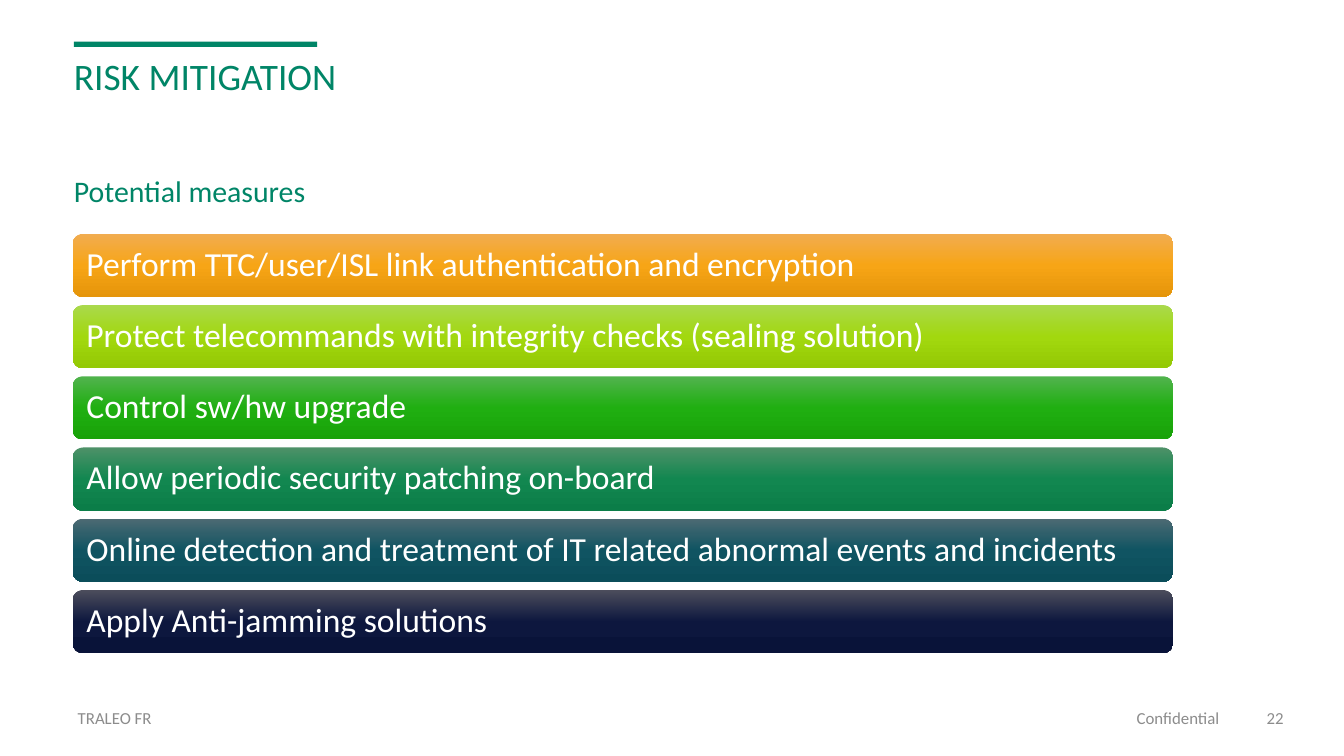
from copy import deepcopy
from dataclasses import dataclass

from lxml import etree
from pptx import Presentation
from pptx.dml.color import RGBColor
from pptx.enum import shapes, text
from pptx.oxml.ns import qn
from pptx.util import Inches, Pt


@dataclass(frozen=True)
class Theme:
    font: str = "Calibri"
    green: str = "008567"
    grey: str = "8C8C8C"
    white: str = "FFFFFF"
    title: int = 20
    heading: int = 16
    measure: int = 18
    footer: int = 9


@dataclass(frozen=True)
class Measure:
    label: str
    colors: tuple[str, str, str]  # gradient from top to bottom


@dataclass(frozen=True)
class Footer:
    label: str
    left: float
    width: float
    align: text.PP_ALIGN


T = Theme()
LEFT, ALIGN_RIGHT = text.PP_ALIGN.LEFT, text.PP_ALIGN.RIGHT
TOP, MIDDLE, BOTTOM = (text.MSO_ANCHOR.TOP, text.MSO_ANCHOR.MIDDLE,
                       text.MSO_ANCHOR.BOTTOM)
BAR_LEFT, BAR_TOP, BAR_WIDTH, BAR_HEIGHT, BAR_STEP = 0.54, 1.74, 8.19, 0.47, 0.53

MEASURES = [
    Measure("Perform TTC/user/ISL link authentication and encryption",
            ("F1AC50", "F7A516", "E5950A")),
    Measure("Protect telecommands with integrity checks (sealing solution)",
            ("AAD94D", "A2D80E", "94C904")),
    Measure("Control sw/hw upgrade", ("51B34D", "20AF11", "18A208")),
    Measure("Allow periodic security patching on-board",
            ("4D9168", "128750", "0B7D48")),
    Measure("Online detection and treatment of IT related abnormal events and incidents",
            ("4C6A73", "105462", "0B4D5A")),
    Measure("Apply Anti-jamming solutions", ("4C4D5C", "0D173E", "091339")),
]
FOOTERS = [
    Footer("TRALEO FR", 0.48, 6.25, LEFT),
    Footer("Confidential", 7.14, 2.03, ALIGN_RIGHT),
    Footer("22", 9.17, 0.48, ALIGN_RIGHT),
]


def place(sp, left: float, top: float, width: float, height: float) -> None:
    sp.left, sp.top = Inches(left), Inches(top)
    sp.width, sp.height = Inches(width), Inches(height)


def write(sp, label: str, *, size: int, color: str, align=LEFT, anchor=MIDDLE,
          spacing: float = 1.0, inset: float = 0.1, bullet: bool = True) -> None:
    tf = sp.text_frame
    tf.word_wrap = True
    tf.auto_size = text.MSO_AUTO_SIZE.NONE
    tf.vertical_anchor = anchor
    tf.margin_left = tf.margin_right = Inches(inset)
    p = tf.paragraphs[0]
    if not bullet:
        pPr = p._p.get_or_add_pPr()
        pPr.set("marL", "0")
        pPr.set("indent", "0")
        etree.SubElement(pPr, qn("a:buNone"))
    p.alignment = align
    p.line_spacing = spacing
    p.space_before = Pt(0)
    r = p.add_run()
    r.text = label
    r.font.name, r.font.size = T.font, Pt(size)
    r.font.color.rgb = RGBColor.from_string(color)


def fill_gradient(sp, colors: tuple[str, str, str]) -> None:
    sp.fill.gradient()
    sp.fill.gradient_angle = 270
    stops = sp._element.spPr.find(".//" + qn("a:gsLst"))
    stops.insert(1, deepcopy(stops[0]))
    for stop, color, position in zip(sp.fill.gradient_stops, colors, (0, 0.5, 1)):
        stop.color.rgb = RGBColor.from_string(color)
        stop.position = position


def add_bar(s, measure: Measure, top: float) -> None:
    sp = s.shapes.add_shape(
        shapes.MSO_SHAPE.ROUNDED_RECTANGLE, Inches(BAR_LEFT), Inches(top),
        Inches(BAR_WIDTH), Inches(BAR_HEIGHT))
    sp.shadow.inherit = False
    sp.line.fill.background()
    fill_gradient(sp, measure.colors)
    write(sp, measure.label, size=T.measure, color=T.white, spacing=0.9,
          inset=0.08)


def add_footer(s, footer: Footer) -> None:
    sp = s.shapes.add_textbox(Inches(footer.left), Inches(5.19),
                              Inches(footer.width), Inches(0.3))
    write(sp, footer.label, size=T.footer, color=T.grey, align=footer.align)


def main() -> None:
    prs = Presentation()
    prs.slide_width = Inches(10)
    prs.slide_height = prs.slide_width * 9 // 16  # widescreen
    s = prs.slides.add_slide(prs.slide_layouts[1])

    # Accent rule and title
    rule = s.shapes.add_shape(shapes.MSO_SHAPE.RECTANGLE, Inches(0.55),
                              Inches(0.31), Inches(1.81), Inches(0.04))
    rule.shadow.inherit = False
    rule.fill.solid()
    rule.fill.fore_color.rgb = RGBColor.from_string(T.green)
    rule.line.fill.background()
    title = s.shapes.title
    place(title, 0.45, 0.38, 8.15, 0.59)
    write(title, "RISK MITIGATION", size=T.title, color=T.green, anchor=TOP,
          spacing=0.9)

    # Heading above the measures
    body = s.placeholders[1]
    place(body, 0.45, 1.23, 8.1, 0.37)
    write(body, "Potential measures", size=T.heading, color=T.green,
          anchor=BOTTOM, bullet=False)
    body.text_frame.paragraphs[0].space_after = Pt(6)

    # Stack of measures
    for i, measure in enumerate(MEASURES):
        add_bar(s, measure, BAR_TOP + i * BAR_STEP)

    # Footer line
    for footer in FOOTERS:
        add_footer(s, footer)

    prs.save("out.pptx")


if __name__ == "__main__":
    main()
